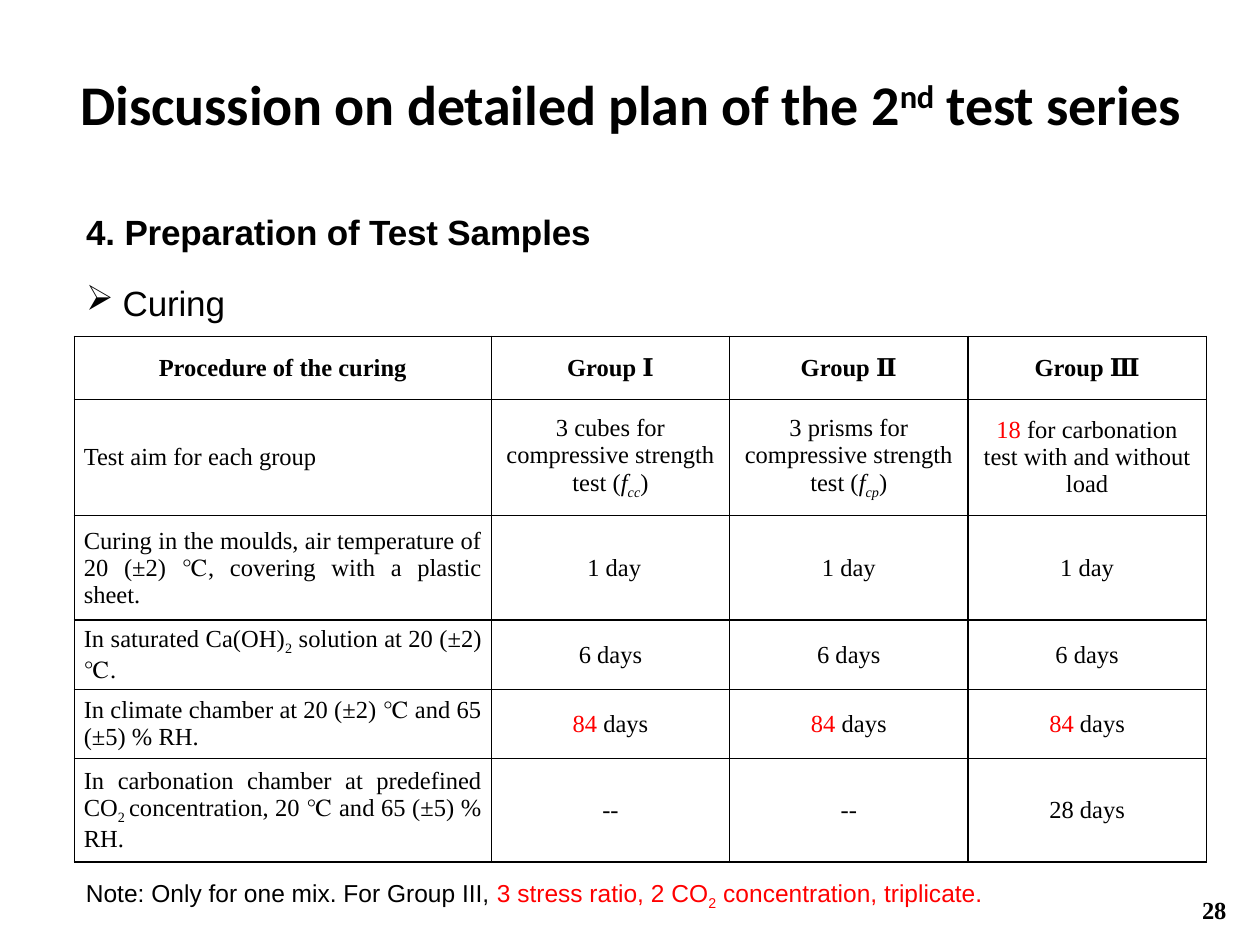
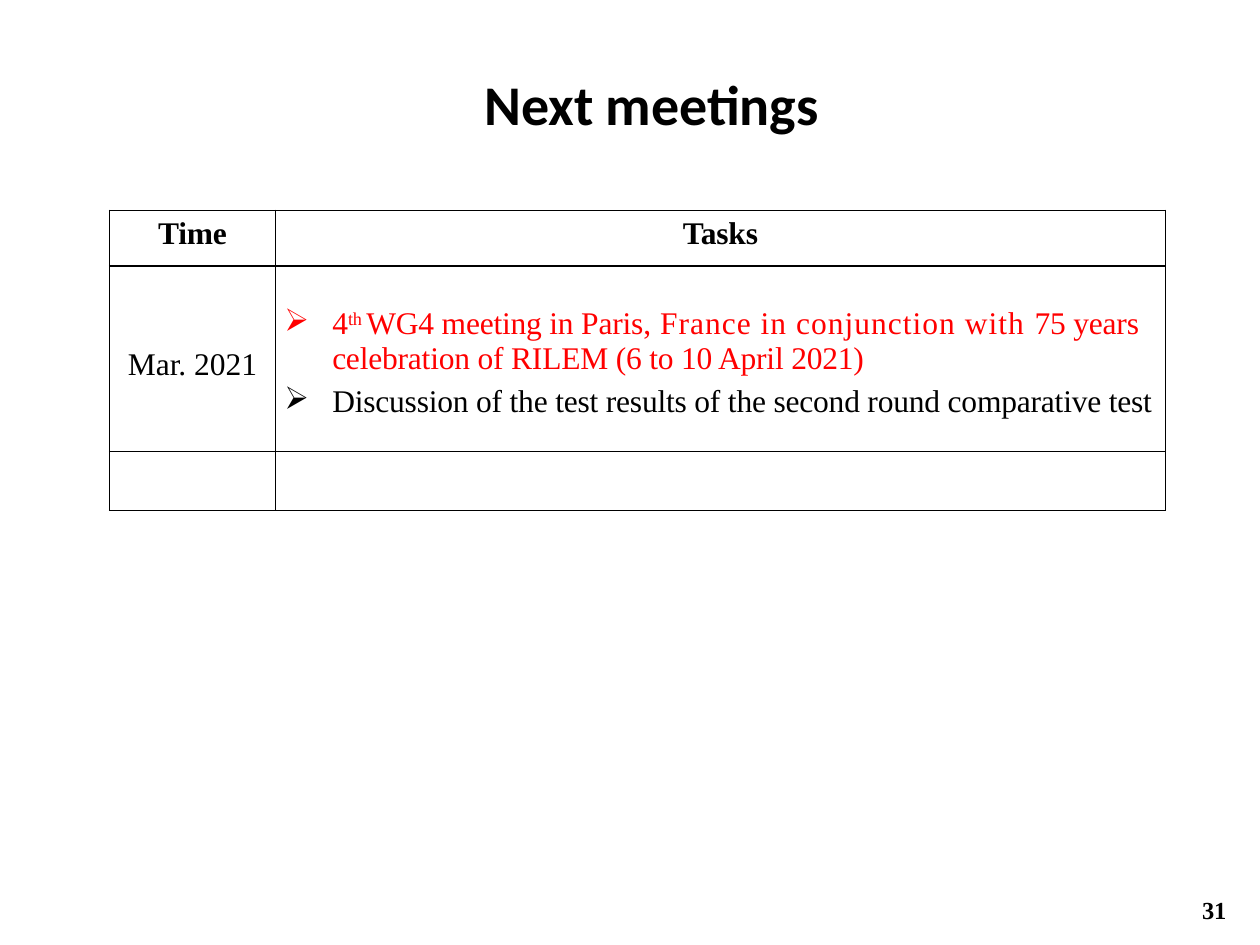
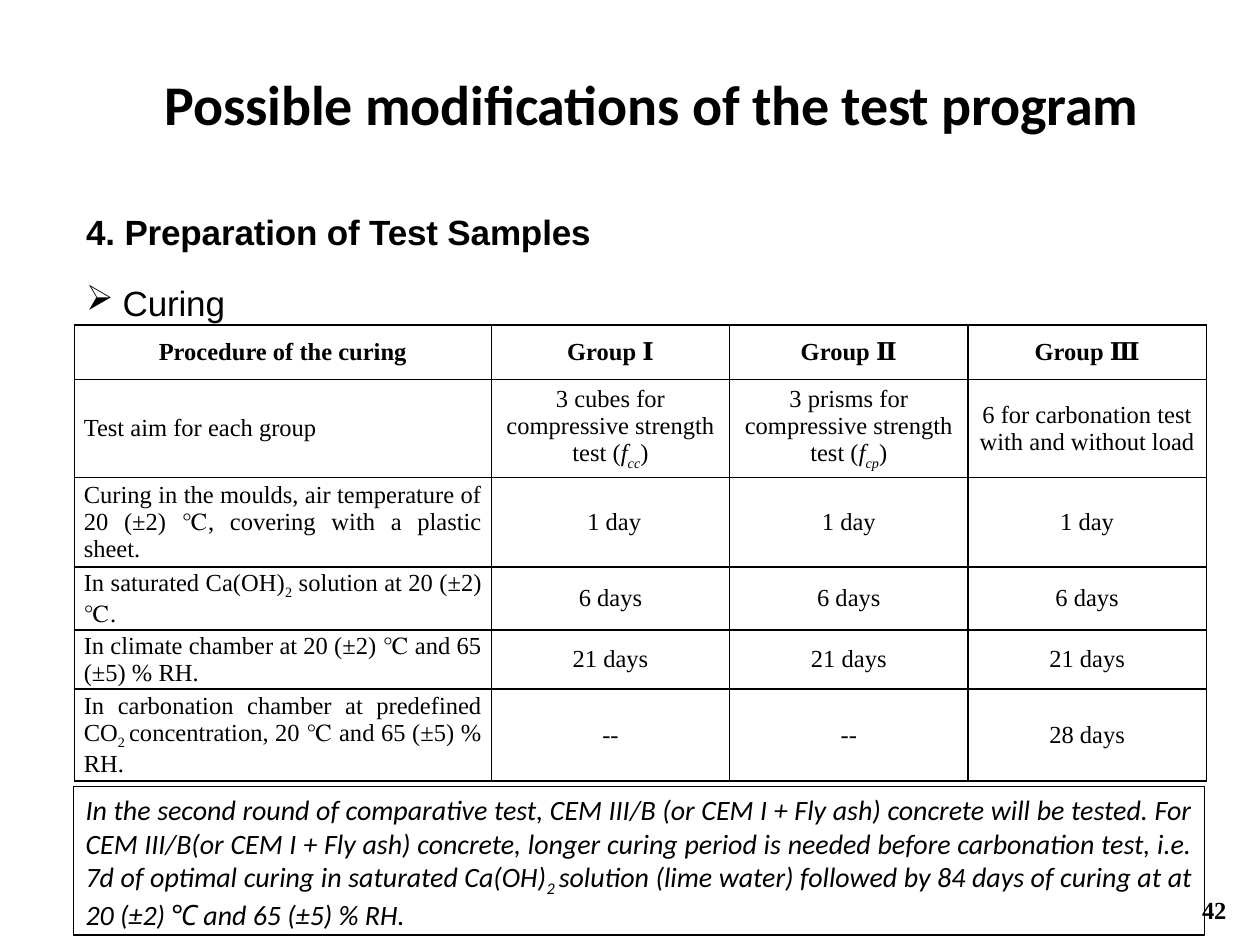
from lxml import etree
from pptx import Presentation
from pptx.dml.color import RGBColor
from pptx.enum.shapes import MSO_SHAPE
from pptx.enum.text import MSO_ANCHOR, MSO_AUTO_SIZE, PP_ALIGN
from pptx.oxml.ns import qn
from pptx.util import Pt

RECT = MSO_SHAPE.RECTANGLE
TOP, MIDDLE = MSO_ANCHOR.TOP, MSO_ANCHOR.MIDDLE
GROW = MSO_AUTO_SIZE.SHAPE_TO_FIT_TEXT
CENTER, JUSTIFY = PP_ALIGN.CENTER, PP_ALIGN.JUSTIFY

BLACK, RED = "000000", "FF0000"
ARROW = "➢"
DEFAULT_INSETS = (7.2, 3.6, 7.2, 3.6)
NO_INSETS = (0, 0, 0, 0)

TITLE = dict(font="Calibri", size=32, bold=True, spc=-0.1)
HEADING = dict(font="Arial", size=20, bold=True, spc=-0.1)
NOTE = dict(font="Arial", size=14)
REMARK = dict(font="Calibri", size=16, italic=True)
PAGE = dict(font="Times New Roman", size=14, bold=True, spc=-0.1)
CELL = dict(font="Times New Roman", size=14)
CELL_HEAD = dict(CELL, bold=True)
MEETING = dict(font="Times New Roman", size=18)
MEETING_HEAD = dict(MEETING, bold=True, spc=-0.1)

WIDE_TITLE = (12, 36, 696, 46)
TITLE_BOX = (78, 36, 588, 46)
HEADING_BOX = (42, 102.24, 653.76, 83.5)
PAGE_BOX = (684, 511.9, 31, 20)
CURING_COLS = (238.3, 136.2, 136.2, 136.2)


def color(hex_code):
    """Turn a hex string into a colour."""
    return RGBColor.from_string(hex_code)


def red(text, **extra):
    """Return a red run."""
    return text, dict(extra, color=RED)


def sub(text, **extra):
    """Return a subscript run."""
    return text, dict(extra, base=-25)


def sup(text, **extra):
    """Return a superscript run."""
    return text, dict(extra, base=30)


def add_run(p, text, font, size, bold=False, italic=False, spc=0, base=0, color_hex=BLACK, **extra):
    """Add one formatted run to a paragraph."""
    r = p.add_run()
    r.text = text
    f = r.font
    f.name, f.size, f.bold, f.italic = font, Pt(size), bold, italic
    f.color.rgb = color(extra.get("color", color_hex))
    rPr = r._r.get_or_add_rPr()
    if spc:
        rPr.set("spc", str(round(spc * 100)))
    if base:
        rPr.set("baseline", str(base * 1000))


def write(p, runs, style, align=None, left=0, indent=0, line=None, before=0, after=0,
          bullet=None, level=0):
    """Format a paragraph and fill it run by run."""
    p.level = level
    p.space_before, p.space_after = Pt(before), Pt(after)
    if align is not None:
        p.alignment = align
    if line is not None:
        p.line_spacing = line
    pPr = p._p.get_or_add_pPr()
    pPr.set("marL", str(Pt(left)))
    pPr.set("indent", str(Pt(indent)))
    if bullet:
        etree.SubElement(pPr, qn("a:buChar")).set("char", bullet)
    else:
        etree.SubElement(pPr, qn("a:buNone"))
    for run in runs:
        text, extra = (run, {}) if isinstance(run, str) else run
        add_run(p, text, **{**style, **extra})


def set_insets(target, insets):
    """Set the four inner margins of a text frame or a cell."""
    target.margin_left, target.margin_top, target.margin_right, target.margin_bottom = map(Pt, insets)


def add_text(s, box, insets=DEFAULT_INSETS, grow=True):
    """Add a wrapping text box and return its text frame."""
    tf = s.shapes.add_textbox(*map(Pt, box)).text_frame
    tf.word_wrap = True
    set_insets(tf, insets)
    if grow:
        tf.auto_size = GROW
    return tf


def set_borders(cell):
    """Draw a thin black border on every side of a cell."""
    tcPr = cell._tc.get_or_add_tcPr()
    for side in ("lnL", "lnR", "lnT", "lnB"):
        ln = etree.SubElement(tcPr, qn(f"a:{side}"), w=str(Pt(1)))
        fill = etree.SubElement(ln, qn("a:solidFill"))
        etree.SubElement(fill, qn("a:srgbClr"), val=BLACK)


def add_grid(s, left, top, cols, rows):
    """Add an unfilled table with black borders and return it."""
    box = (left, top, sum(cols), sum(rows))
    table = s.shapes.add_table(len(rows), len(cols), *map(Pt, box)).table
    table.first_row = table.horz_banding = False
    for col, width in zip(table.columns, cols):
        col.width = Pt(width)
    for row, height in zip(table.rows, rows):
        row.height = Pt(height)
    for cell in table.iter_cells():
        set_borders(cell)
        cell.fill.background()
    return table


def fill_cell(cell, paragraphs, style, insets, anchor=MIDDLE, **fmt):
    """Write paragraphs into a cell."""
    cell.vertical_anchor = anchor
    set_insets(cell, insets)
    tf = cell.text_frame
    for i, runs in enumerate(paragraphs):
        p = tf.add_paragraph() if i else tf.paragraphs[0]
        write(p, runs, style, **fmt)


def add_frame(prs, title, page, title_box=TITLE_BOX):
    """Add a blank slide with its title and page number."""
    s = prs.slides.add_slide(prs.slide_layouts[6])
    write(add_text(s, title_box).paragraphs[0], title, TITLE, align=CENTER, left=0.7, before=0.9)
    tf = add_text(s, PAGE_BOX, NO_INSETS, grow=False)
    write(tf.paragraphs[0], [page], PAGE, left=2.9, line=Pt(16.2))
    return s


def add_heading(s, box):
    """Add the section heading and its bulleted topic."""
    tf = add_text(s, box, (0, 5.8, 0, 0))
    write(tf.paragraphs[0], ["4. Preparation of Test Samples"], HEADING,
          left=7.2, line=1.5, before=11.8, level=1)
    write(tf.add_paragraph(), ["Curing"], dict(HEADING, bold=False),
          left=28.1, indent=-20.9, line=1.2, before=11.8, bullet=ARROW, level=1)


def strength_aim(samples, index):
    """Return the runs for a compressive strength test."""
    return [f"{samples} for compressive strength test (", ("f", {"italic": True}),
            sub(index, italic=True), ")"]


def add_curing_table(s, left, top, rows, carbonation_aim, chamber_days):
    """Add the table of curing steps for the three groups."""
    table = add_grid(s, left, top, CURING_COLS, rows)
    content = [
        [["Procedure of the curing"], ["Group Ⅰ"], ["Group Ⅱ"], ["Group Ⅲ"]],
        [["Test aim for each group"], strength_aim("3 cubes", "cc"),
         strength_aim("3 prisms", "cp"), carbonation_aim],
        [["Curing in the moulds, air temperature of 20 (±2) ℃, covering with a plastic sheet."]]
        + [["1 day"]] * 3,
        [["In saturated Ca(OH)", sub("2"), " solution at 20 (±2) ℃."]] + [["6 days"]] * 3,
        [["In climate chamber at 20 (±2) ℃ and 65 (±5) % RH."]] + [chamber_days] * 3,
        [["In carbonation chamber at predefined CO", sub("2 "),
          "concentration, 20 ℃ and 65 (±5) % RH."], ["--"], ["--"], ["28 days"]],
    ]
    for i, row in enumerate(content):
        for j, runs in enumerate(row):
            fill_cell(table.cell(i, j), [runs], CELL if i else CELL_HEAD, (5.4, 0, 5.4, 0),
                      align=JUSTIFY if i and j == 0 else CENTER,
                      indent=4.3 if (i, j) == (2, 1) else 0)


def add_meeting_table(s, left, top):
    """Add the table of meeting dates and tasks."""
    table = add_grid(s, left, top, (94.9, 508.5), (31.9, 105.8, 34))
    for j, name in enumerate(("Time", "Tasks")):
        fill_cell(table.cell(0, j), [[name]], MEETING_HEAD, (0, 3.6, 0, 0), TOP,
                  align=CENTER, before=3.7)
    fill_cell(table.cell(1, 0), [["Mar. 2021"]], MEETING, (0, 6.5, 0, 0), align=CENTER)
    tasks = [
        [red("4"), sup("th ", color=RED), red("WG4 meeting in Paris,"),
         red(" France in conjunction with ", spc=0.6),
         red("75 years celebration of RILEM (6 to 10 April 2021)")],
        ["Discussion of the test results of the second round comparative test"],
    ]
    fill_cell(table.cell(1, 1), tasks, dict(MEETING, spc=-0.1), (0, 5, 0, 0),
              left=32.4, indent=-27.4, before=4.7, bullet=ARROW)


def add_note(s, box):
    """Add the note under the curing table."""
    write(add_text(s, box).paragraphs[0],
          ["Note: Only for one mix. For Group III, ", red("3 stress ratio, 2 CO"),
           sub("2", color=RED), red(" concentration, triplicate.")], NOTE)


def add_remark(s, box):
    """Add the outlined remark on longer curing."""
    sp = s.shapes.add_shape(RECT, *map(Pt, box))
    sp.shadow.inherit = False
    sp.fill.background()
    sp.line.color.rgb = color(BLACK)
    sp.line.width = Pt(0.75)
    tf = sp.text_frame
    tf.word_wrap = True
    tf.auto_size = GROW
    tf.vertical_anchor = TOP
    write(tf.paragraphs[0],
          ["In the second round of comparative test, CEM III/B (or CEM I + Fly ash) concrete "
           "will be tested. For CEM III/B(or CEM I + Fly ash) concrete, longer curing period is "
           "needed before carbonation test, i.e. 7d of optimal curing in saturated Ca(OH)",
           sub("2 "),
           "solution (lime water) followed by 84 days of curing at at 20 (±2) ℃ and "
           "65 (±5) % RH."], REMARK, align=JUSTIFY, after=6)


def build_plan(prs):
    """Build the slide on the second test series."""
    s = add_frame(prs, ["Discussion on detailed plan of the 2", sup("nd"), " test series"],
                  "28", WIDE_TITLE)
    add_heading(s, HEADING_BOX)
    add_curing_table(s, 42.5, 192.2, (36.2, 66.2, 59.8, 39.6, 39.6, 59),
                     [red("18"), " for carbonation test with and without load"],
                     [red("84"), " days"])
    add_note(s, (42, 498.2, 648, 24.5))


def build_meetings(prs):
    """Build the slide on the next meetings."""
    s = add_frame(prs, ["Next meetings"], "31")
    add_meeting_table(s, 62.6, 120.2)


def build_modifications(prs):
    """Build the slide on changes to the test program."""
    s = add_frame(prs, ["Possible modifications of the test program"], "42")
    add_heading(s, HEADING_BOX)
    add_curing_table(s, 42.5, 185.8, (31, 56.2, 51.1, 30.2, 32.4, 45.4),
                     ["6 for carbonation test with and without load"], ["21 days"])
    add_remark(s, (41.8, 449.3, 646.6, 85))


def main():
    """Build the presentation and save it."""
    prs = Presentation()
    prs.slide_width, prs.slide_height = Pt(720), Pt(540)
    build_plan(prs)
    build_meetings(prs)
    build_modifications(prs)
    prs.save("out.pptx")


if __name__ == "__main__":
    main()
